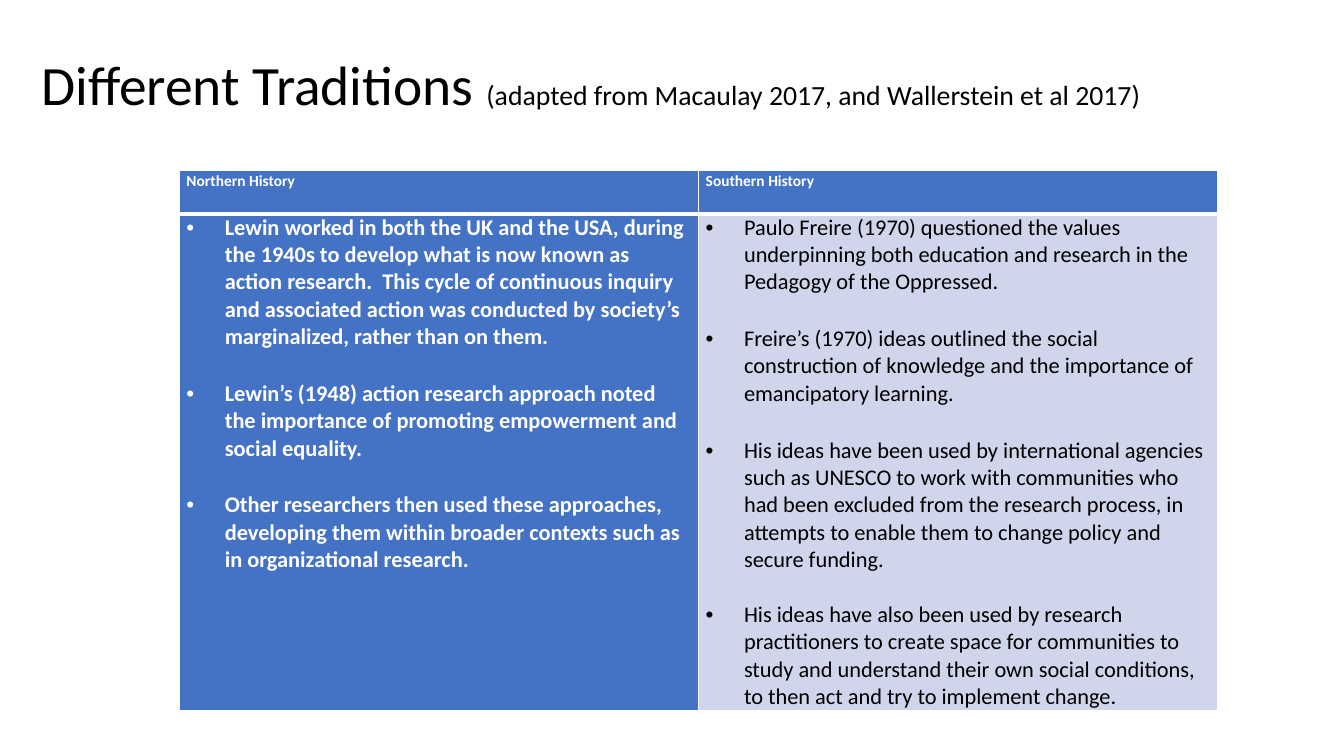
from lxml import etree
from pptx import Presentation
from pptx.dml.color import RGBColor
from pptx.enum.text import MSO_ANCHOR, MSO_AUTO_SIZE, PP_ALIGN
from pptx.oxml.ns import qn
from pptx.util import Inches, Pt

WHITE = RGBColor(0xFF, 0xFF, 0xFF)
BLACK = RGBColor(0, 0, 0)
BLUE = RGBColor(0x44, 0x72, 0xC4)
PALE = RGBColor(0xCF, 0xD5, 0xEA)
TOP = MSO_ANCHOR.TOP
LEFT = PP_ALIGN.LEFT
NO_FIT = MSO_AUTO_SIZE.NONE


def add_text(para, text, size, color=BLACK, bold=False, line=1.0, before=0, bullet=False):
    para.alignment = LEFT
    para.line_spacing = line
    para.space_before = Pt(before)
    run = para.add_run()
    run.text = text
    run.font.name = "Calibri"
    run.font.size = Pt(size)
    run.font.bold = bold
    run.font.color.rgb = color
    if bullet:
        props = para._p.get_or_add_pPr()
        props.set("marL", str(Inches(0.38)))
        props.set("indent", str(Inches(-0.38)))
        etree.SubElement(props, qn("a:buFont"), typeface="Arial")
        etree.SubElement(props, qn("a:buChar"), char="•")


def style_cell(cell, fill, base):
    cell.fill.solid()
    cell.fill.fore_color.rgb = fill
    cell.vertical_anchor = TOP
    cell.margin_left = cell.margin_right = Inches(0.07)
    cell.margin_top = cell.margin_bottom = 0
    props = cell._tc.get_or_add_tcPr()
    edges = [("a:lnL", 1), ("a:lnR", 1), ("a:lnT", 1 if base == 3 else 3), ("a:lnB", base)]
    for spot, (tag, width) in enumerate(edges):
        edge = etree.Element(qn(tag), w=str(Pt(width)))
        solid = etree.SubElement(edge, qn("a:solidFill"))
        etree.SubElement(solid, qn("a:srgbClr"), val=str(WHITE))
        props.insert(spot, edge)


deck = Presentation()
deck.slide_width = Inches(13.33)
deck.slide_height = Inches(7.5)
slide = deck.slides.add_slide(deck.slide_layouts[5])

title = slide.shapes.title
title.left, title.top = Inches(0.31), Inches(0.55)
title.width, title.height = Inches(11.5), Inches(1.29)
frame = title.text_frame
frame.word_wrap = True
frame.auto_size = NO_FIT
frame.vertical_anchor = TOP
frame.margin_top = Inches(0.02)
head = frame.paragraphs[0]
add_text(head, "Different Traditions ", 39.6, line=0.9)
add_text(head, "(adapted from Macaulay 2017, and Wallerstein et al 2017)", 19.8, line=0.9)

columns = [
    ("Northern History", BLUE, WHITE, True, [
        "Lewin worked in both the UK and the USA, during the 1940s to develop what is now known as action research.  This cycle of continuous inquiry and associated action was conducted by society’s marginalized, rather than on them.",
        "Lewin’s (1948) action research approach noted the importance of promoting empowerment and social equality.",
        "Other researchers then used these approaches, developing them within broader contexts such as in organizational research.",
    ]),
    ("Southern History", PALE, BLACK, False, [
        "Paulo Freire (1970) questioned the values underpinning both education and research in the Pedagogy of the Oppressed.",
        "Freire’s (1970) ideas outlined the social construction of knowledge and the importance of emancipatory learning.",
        "His ideas have been used by international agencies such as UNESCO to work with communities who had been excluded from the research process, in attempts to enable them to change policy and secure funding.",
        "His ideas have also been used by research practitioners to create space for communities to study and understand their own social conditions, to then act and try to implement change.",
    ]),
]
gaps = [0, 21, 21, 19.5]

table = slide.shapes.add_table(
    2, 2, Inches(1.78), Inches(1.69), Inches(10.3), Inches(5.34)).table
table.rows[0].height = Inches(0.43)
table.rows[1].height = Inches(4.91)

for col, (name, fill, color, bold, points) in enumerate(columns):
    table.columns[col].width = Inches(5.15)
    top, body = table.cell(0, col), table.cell(1, col)
    style_cell(top, BLUE, 3)
    style_cell(body, fill, 1)
    add_text(top.text_frame.paragraphs[0], name, 11, WHITE, True, line=1.07)
    for row, (point, gap) in enumerate(zip(points, gaps)):
        para = body.text_frame.add_paragraph() if row else body.text_frame.paragraphs[0]
        add_text(para, point, 16, color, bold, before=gap, bullet=True)

deck.save("out.pptx")
